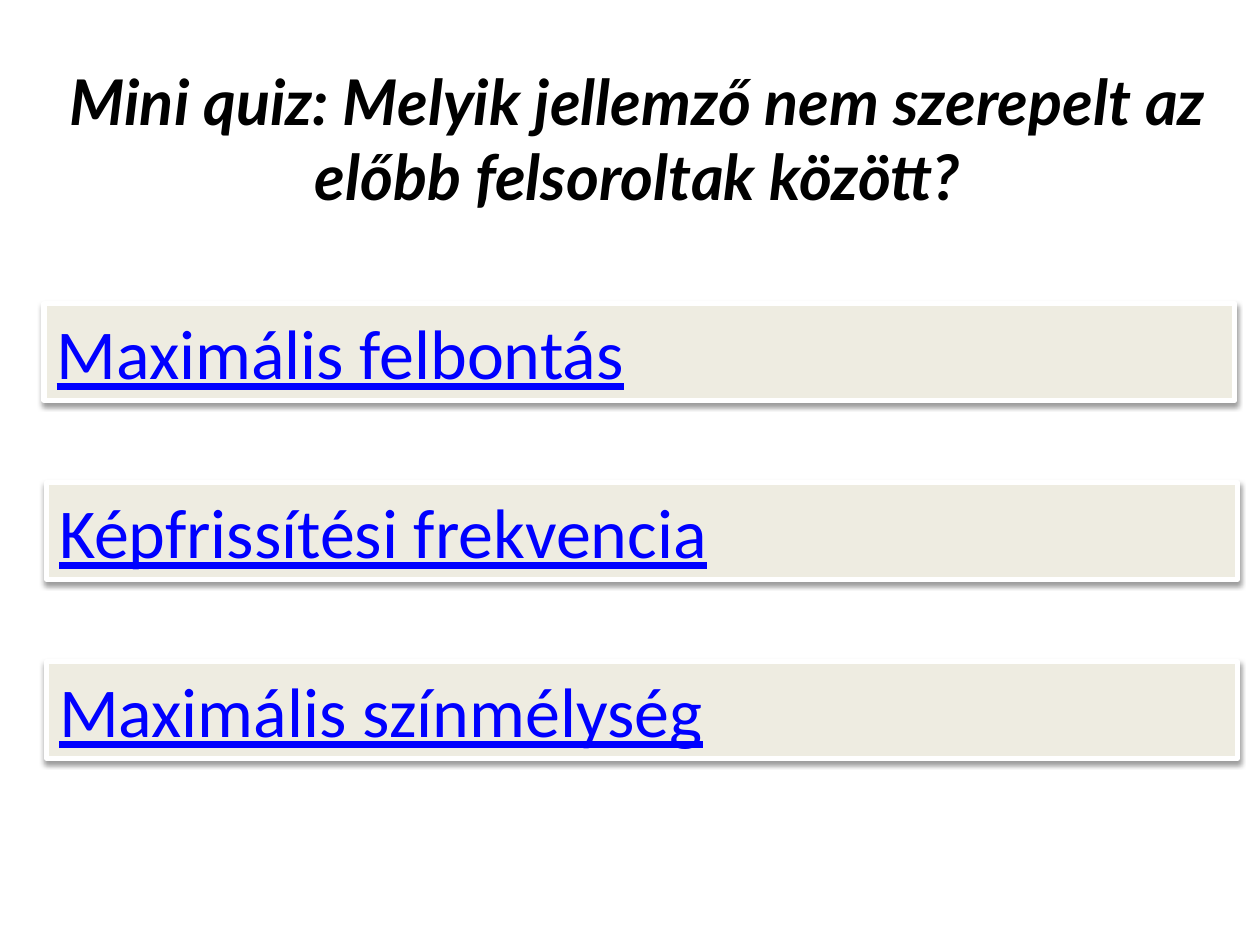
from lxml import etree
from pptx import Presentation
from pptx.dml.color import RGBColor
from pptx.enum import shapes, text
from pptx.oxml import ns
from pptx.util import Inches, Pt

BLACK = RGBColor(0x00, 0x00, 0x00)
WHITE = RGBColor(0xFF, 0xFF, 0xFF)
CREAM = RGBColor(0xEE, 0xEC, 0xE1)
LINK_BLUE = RGBColor(0x00, 0x00, 0xFF)


class QuizSlide:
    title_font, answer_font = "Lato", "Calibri"
    title_size, answer_size = Pt(36), Pt(40)

    def __init__(self, prs):
        self.s = prs.slides.add_slide(prs.slide_layouts[5])

    def title(self, words, x, y, w, h):
        sp = self.s.shapes.title
        sp.left, sp.top, sp.width, sp.height = map(Inches, (x, y, w, h))
        tf = sp.text_frame
        tf.text = words
        tf.word_wrap = True
        tf.auto_size = text.MSO_AUTO_SIZE.NONE
        p = tf.paragraphs[0]
        p.alignment = text.PP_ALIGN.CENTER
        font = p.runs[0].font
        font.name, font.size = self.title_font, self.title_size
        font.bold = font.italic = True
        font.color.rgb = BLACK

    def answer(self, words, x, y, w, h):
        sp = self.s.shapes.add_shape(
            shapes.MSO_SHAPE.RECTANGLE, *map(Inches, (x, y, w, h)))
        sp.fill.solid()
        sp.fill.fore_color.rgb = CREAM
        sp.line.color.rgb = WHITE
        sp.line.width = Pt(3)
        self.drop_shadow(sp)
        tf = sp.text_frame
        tf.text = words
        tf.word_wrap = True
        tf.vertical_anchor = text.MSO_ANCHOR.TOP
        p = tf.paragraphs[0]
        p.alignment = text.PP_ALIGN.LEFT
        font = p.runs[0].font
        font.name, font.size = self.answer_font, self.answer_size
        font.underline = True
        font.color.rgb = LINK_BLUE

    def drop_shadow(self, sp):
        sp.shadow.inherit = False
        effects = sp.element.spPr.find(ns.qn("a:effectLst"))
        shadow = etree.SubElement(
            effects, ns.qn("a:outerShdw"), blurRad=str(Pt(3.1)),
            dist=str(Pt(1.6)), dir="5400000", rotWithShape="0")
        color = etree.SubElement(shadow, ns.qn("a:srgbClr"), val=str(BLACK))
        etree.SubElement(color, ns.qn("a:alpha"), val="38000")


def main():
    prs = Presentation()
    prs.slide_width, prs.slide_height = Inches(10), Inches(7.5)
    quiz = QuizSlide(prs)

    # Question
    quiz.title("Mini quiz: Melyik jellemző nem szerepelt az előbb "
               "felsoroltak között?", 0, 0.44, 10.12, 1.31)

    # Answers, evenly stacked
    answers = [("Maximális felbontás", 0.35),
               ("Képfrissítési frekvencia", 0.37),
               ("Maximális színmélység", 0.37)]
    for i, (words, x) in enumerate(answers):
        quiz.answer(words, x, 2.41 + 1.42 * i, 9.45, 0.77)

    prs.save("out.pptx")


if __name__ == "__main__":
    main()
